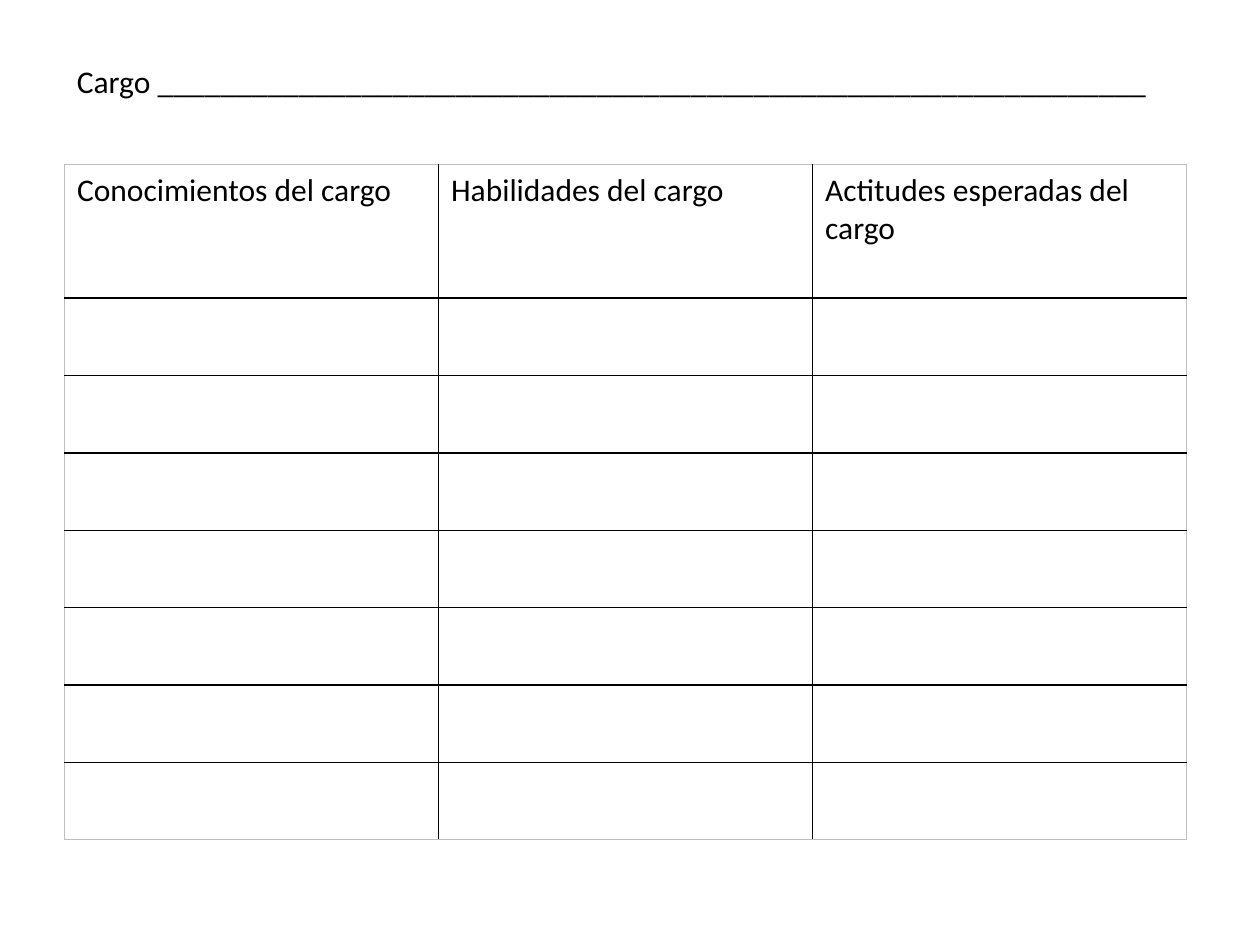
from lxml import etree
from pptx import Presentation
from pptx import util as u
from pptx.dml.color import RGBColor
from pptx.enum import text
from pptx.oxml import ns

COLORS = {"text": "000000", "grid": "000000", "frame": "BFBFBF"}
FONT, SIZE = "Calibri", 18
ROLE = "Cargo _______________________________________________________________"
HEADERS = ["Conocimientos del cargo", "Habilidades del cargo", "Actitudes esperadas del cargo"]
BLANK_ROWS = 7
LEFT, TABLE_TOP = 1.3, 3.32
COL_W, HEAD_H, ROW_H = 7.54, 2.69, 1.56


def add_run(p, content):
    r = p.add_run()
    r.text = content
    r.font.name = FONT
    r.font.size = u.Pt(SIZE)
    r.font.color.rgb = RGBColor.from_string(COLORS["text"])


def add_border(cell, side, outer):
    color, width = (COLORS["frame"], 0.5) if outer else (COLORS["grid"], 1)
    ln = etree.SubElement(cell._tc.get_or_add_tcPr(), ns.qn(f"a:ln{side}"), w=str(u.Pt(width)))
    fill = etree.SubElement(ln, ns.qn("a:solidFill"))
    etree.SubElement(fill, ns.qn("a:srgbClr"), val=color)


def add_role_line(s):
    sp = s.shapes.add_textbox(u.Cm(LEFT), u.Cm(1.12), u.Cm(22.35), u.Cm(1.8))
    tf = sp.text_frame
    tf.word_wrap = True
    tf.vertical_anchor = text.MSO_ANCHOR.TOP
    add_run(tf.paragraphs[0], ROLE)


def add_profile_table(s):
    rows, cols = BLANK_ROWS + 1, len(HEADERS)
    height = HEAD_H + BLANK_ROWS * ROW_H
    tbl = s.shapes.add_table(rows, cols, u.Cm(LEFT), u.Cm(TABLE_TOP),
                             u.Cm(cols * COL_W), u.Cm(height)).table
    tbl.first_row = tbl.horz_banding = False
    for col in tbl.columns:
        col.width = u.Cm(COL_W)
    for i, row in enumerate(tbl.rows):
        row.height = u.Cm(ROW_H if i else HEAD_H)
        for j, cell in enumerate(row.cells):
            edges = {"L": j == 0, "R": j == cols - 1, "T": i == 0, "B": i == rows - 1}
            for side, outer in edges.items():
                add_border(cell, side, outer)
            cell.fill.background()
            if i == 0:
                add_run(cell.text_frame.paragraphs[0], HEADERS[j])


def main():
    prs = Presentation()
    prs.slide_width, prs.slide_height = u.Cm(25.4), u.Cm(19.05)
    s = prs.slides.add_slide(prs.slide_layouts[6])
    add_role_line(s)
    add_profile_table(s)
    prs.save("out.pptx")


if __name__ == "__main__":
    main()
